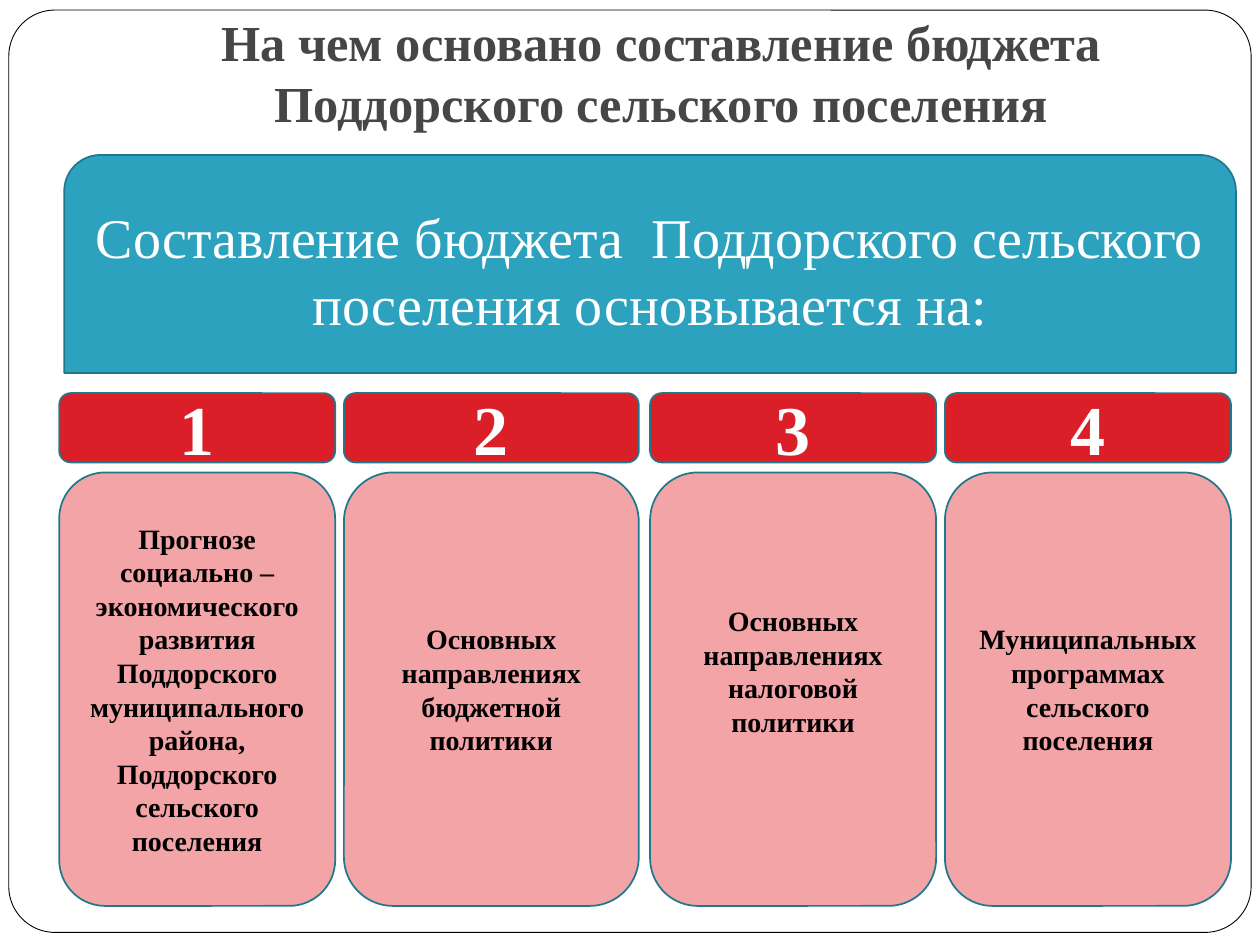
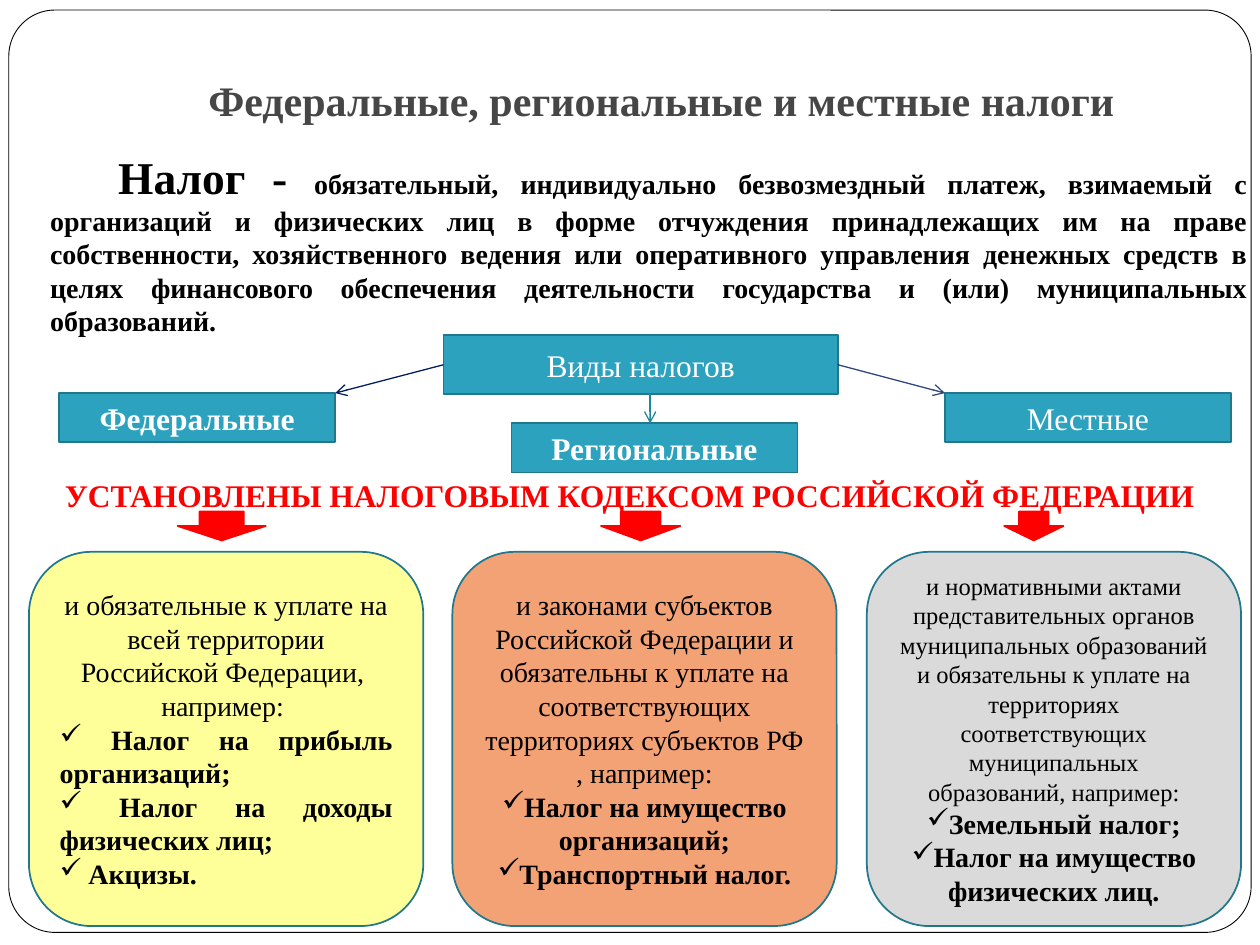
import pptx
import pptx.util
import pptx.dml.color
import pptx.enum.shapes
import pptx.enum.text
import lxml.etree
from pptx.util import Inches

SHAPE = pptx.enum.shapes.MSO_SHAPE
ALIGN = pptx.enum.text.PP_ALIGN
ANCHOR = pptx.enum.text.MSO_ANCHOR
FONT = "Times New Roman"
TEAL, TEAL_EDGE, RED, PINK = "2DA2BF", "21788D", "DA1F28", "F2A4A7"
WHITE, BLACK, TITLE_GREY = "FFFFFF", "000000", "464646"
BRIGHT_RED, NAVY, ARROW_TEAL = "FF0000", "002060", "1E859F"


def rgb(value):
    return pptx.dml.color.RGBColor.from_string(value)


def add_xml(parent, tag, **attributes):
    child = lxml.etree.SubElement(parent, pptx.oxml.ns.qn(tag))
    for name, value in attributes.items():
        child.set(name, value)
    return child


class Deck:
    """Holds the shared style and the slide being filled."""

    def __init__(self):
        self.presentation = pptx.Presentation()
        self.presentation.slide_width = Inches(10)
        self.presentation.slide_height = Inches(7.5)
        self.slide = None

    def new_slide(self, title, size, top, height):
        """Start a slide with the rounded frame and a bottom-anchored title."""
        self.slide = self.presentation.slides.add_slide(self.presentation.slide_layouts[6])
        frame = self.box(SHAPE.ROUNDED_RECTANGLE, 0.07, 0.08, 9.86, 7.32, WHITE, BLACK, 0.5)
        frame.adjustments[0] = 0.05
        heading = self.text_box(1, top, 8.5, height)
        heading.vertical_anchor = ANCHOR.BOTTOM
        heading.margin_bottom = Inches(0.1)
        self.paragraph(heading, title, size, TITLE_GREY, bold=True)

    def box(self, kind, left, top, width, height, fill, line=TEAL_EDGE, line_width=1):
        shape = self.slide.shapes.add_shape(
            kind, Inches(left), Inches(top), Inches(width), Inches(height))
        shape.shadow.inherit = False
        shape.fill.solid()
        shape.fill.fore_color.rgb = rgb(fill)
        shape.line.color.rgb = rgb(line)
        shape.line.width = pptx.util.Pt(line_width)
        shape.text_frame.word_wrap = True
        shape.text_frame.vertical_anchor = ANCHOR.MIDDLE
        return shape

    def label(self, kind, left, top, width, height, fill, text, size, color=WHITE, bold=False):
        """Add a box that carries one centred paragraph."""
        shape = self.box(kind, left, top, width, height, fill)
        self.paragraph(shape.text_frame, text, size, color, bold)
        return shape

    def text_box(self, left, top, width, height):
        frame = self.slide.shapes.add_textbox(
            Inches(left), Inches(top), Inches(width), Inches(height)).text_frame
        frame.word_wrap = True
        return frame

    def paragraph(self, frame, text, size, color=BLACK, bold=False,
                  align=ALIGN.CENTER, bullet=False):
        """Fill the frame's empty first paragraph, or add one after its text."""
        paragraph = frame.add_paragraph() if frame.text else frame.paragraphs[0]
        if bullet:
            properties = paragraph._p.get_or_add_pPr()
            properties.set("marL", "0")
            properties.set("indent", "0")
            add_xml(properties, "a:buChar", char="✓")
        paragraph.alignment = align
        font = paragraph.font
        font.name, font.size, font.bold = FONT, pptx.util.Pt(size), bold
        font.color.rgb = rgb(color)
        paragraph.add_run().text = text
        return paragraph

    def arrow(self, start, end, color, source=None, side=None, opacity=100):
        """Draw an open-headed line, joined to a side of source if one is given."""
        line = self.slide.shapes.add_connector(
            pptx.enum.shapes.MSO_CONNECTOR.STRAIGHT,
            *(Inches(value) for value in (*start, *end)))
        if source is not None:
            line.begin_connect(source, side)
        line.line.color.rgb = rgb(color)
        line.line.width = pptx.util.Pt(0.75)
        outline = line.line._get_or_add_ln()
        if opacity < 100:
            tint = outline.find(".//" + pptx.oxml.ns.qn("a:srgbClr"))
            add_xml(tint, "a:alpha", val=str(opacity * 1000))
        add_xml(outline, "a:tailEnd", type="arrow")
        add_xml(line._element.spPr, "a:effectLst")


def budget_basis(deck):
    deck.new_slide("На чем основано составление бюджета Поддорского сельского поселения",
                   28.8, 0.21, 0.94)
    deck.label(SHAPE.ROUND_2_SAME_RECTANGLE, 0.51, 1.23, 9.3, 1.73, TEAL,
               "Составление бюджета  Поддорского сельского поселения основывается на:", 32)
    columns = [
        (0.47, 2.19, "Прогнозе социально – экономического развития Поддорского "
                     "муниципального района, Поддорского сельского поселения"),
        (2.73, 2.34, "Основных направлениях бюджетной политики"),
        (5.16, 2.27, "Основных направлениях налоговой политики"),
        (7.5, 2.27, "Муниципальных программах сельского поселения"),
    ]
    for number, (left, width, basis) in enumerate(columns, 1):
        deck.label(SHAPE.ROUNDED_RECTANGLE, left, 3.12, width, 0.55, RED,
                   str(number), 40, bold=True)
        card = deck.label(SHAPE.ROUNDED_RECTANGLE, left, 3.75, width, 3.44, PINK,
                          basis, 16, BLACK, bold=True)
        if number == 3:
            card.text_frame.margin_bottom = Inches(0.34)


def tax_kinds(deck):
    deck.new_slide("Федеральные, региональные и местные налоги", 24, 0.3, 0.79)

    definition = deck.paragraph(
        deck.text_box(0, 1.13, 10, 1.5), "Налог - ", 16, bold=True, align=ALIGN.JUSTIFY)
    definition.runs[0].font.size = pptx.util.Pt(26)
    definition.add_run().text = (
        "обязательный, индивидуально безвозмездный платеж, взимаемый с организаций и "
        "физических лиц в форме отчуждения принадлежащих им на праве собственности, "
        "хозяйственного ведения или оперативного управления денежных средств в целях "
        "финансового обеспечения деятельности государства и (или) муниципальных образований.")
    indents = definition._p.get_or_add_pPr()
    indents.set("marL", str(Inches(0.3)))
    indents.set("indent", str(Inches(0.54)))

    deck.paragraph(deck.text_box(0, 3.73, 10, 0.39),
                   "УСТАНОВЛЕНЫ НАЛОГОВЫМ КОДЕКСОМ РОССИЙСКОЙ ФЕДЕРАЦИИ",
                   18, BRIGHT_RED, bold=True)

    kinds = deck.label(SHAPE.RECTANGLE, 3.52, 2.66, 3.13, 0.47, TEAL, "Виды налогов", 18)
    for left, top, width, level, bold in [
        (0.47, 3.12, 2.19, "Федеральные", True),
        (4.06, 3.36, 2.27, "Региональные", True),
        (7.5, 3.12, 2.27, "Местные", False),
    ]:
        deck.label(SHAPE.FLOWCHART_PROCESS, left, top, width, 0.39, TEAL, level, 18, bold=bold)
    deck.arrow((3.52, 2.89), (2.66, 3.12), NAVY, kinds, 1)
    deck.arrow((5.16, 3.12), (5.16, 3.36), ARROW_TEAL)
    deck.arrow((6.65, 2.89), (7.5, 3.12), NAVY, kinds, 3, opacity=81)

    rounded, alternate = SHAPE.ROUNDED_RECTANGLE, SHAPE.FLOWCHART_ALTERNATE_PROCESS
    cards = [
        (rounded, 0.23, 3.13, "FFFF99", 16, ALIGN.JUSTIFY,
         ["и обязательные к уплате на всей территории Российской Федерации, ", "например: "],
         [" Налог на прибыль организаций;", " Налог на доходы физических лиц;", " Акцизы."]),
        (alternate, 3.59, 3.05, "F3A276", 16, ALIGN.CENTER,
         ["и законами субъектов Российской Федерации и обязательны к уплате на "
          "соответствующих территориях субъектов РФ , например:"],
         ["Налог на имущество организаций;", "Транспортный налог."]),
        (alternate, 6.88, 2.97, "DADADA", 14, ALIGN.CENTER,
         ["и нормативными актами представительных органов муниципальных образований и "
          "обязательны к уплате на территориях соответствующих муниципальных "
          "образований, например:"],
         ["Земельный налог;", "Налог на имущество физических лиц."]),
    ]
    for kind, left, width, fill, size, tax_align, rules, taxes in cards:
        frame = deck.box(kind, left, 4.38, width, 2.97, fill).text_frame
        for rule in rules:
            deck.paragraph(frame, rule, size)
        for tax in taxes:
            deck.paragraph(frame, tax, 16, bold=True, align=tax_align, bullet=True)

    for left, width in [(1.41, 0.7), (4.77, 0.63), (7.97, 0.47)]:
        deck.box(SHAPE.DOWN_ARROW, left, 4.06, width, 0.23, BRIGHT_RED, BRIGHT_RED)


def main():
    deck = Deck()
    budget_basis(deck)
    tax_kinds(deck)
    deck.presentation.save("out.pptx")


if __name__ == "__main__":
    main()
